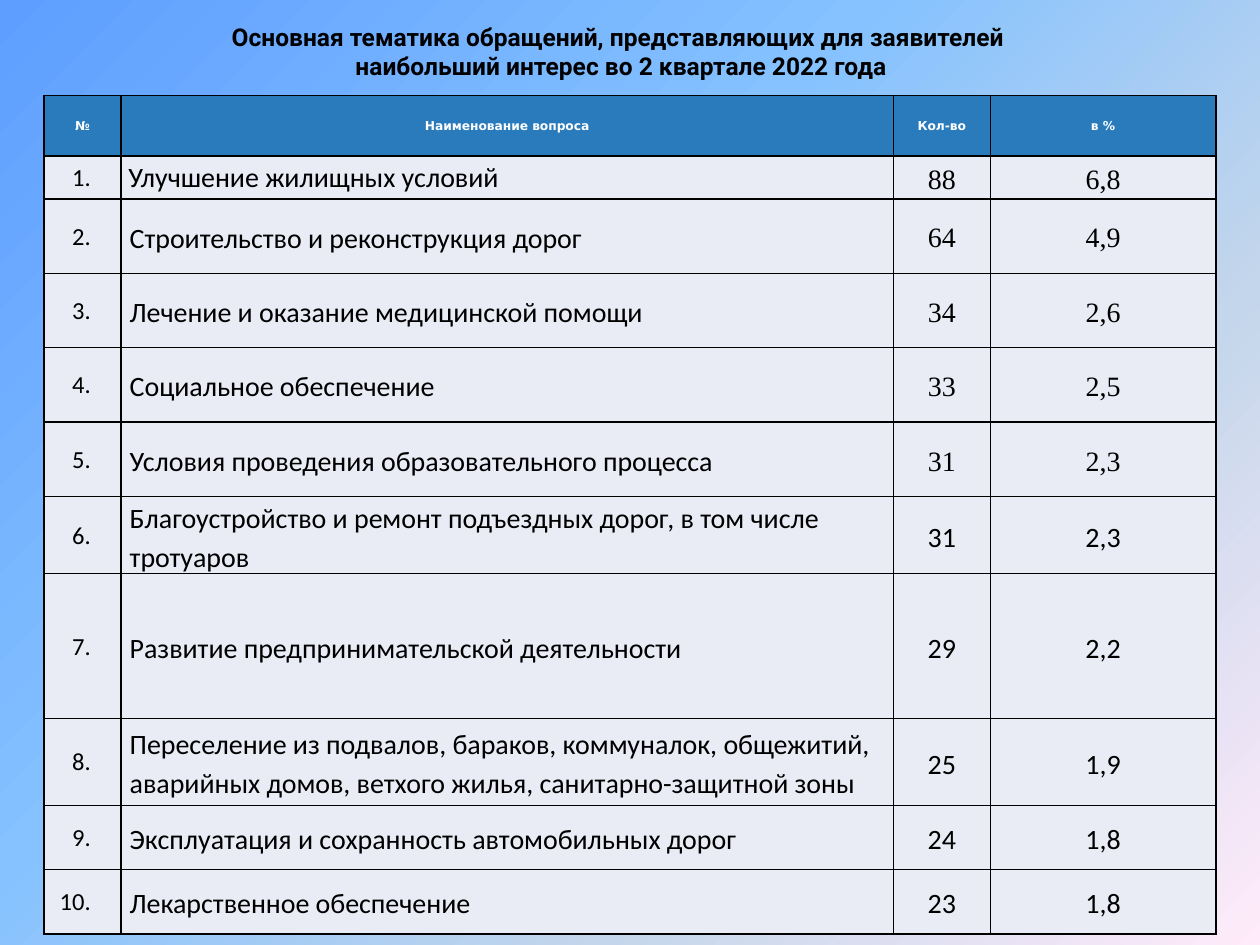
from dataclasses import dataclass

import lxml.etree
import pptx
import pptx.dml.color
import pptx.enum.text
import pptx.oxml
import pptx.oxml.ns
import pptx.util

COLORS = {
    "text": "000000", "header_text": "FFFFFF", "border": "000000",
    "header": "297BBC", "body": "E9EBF5",
}
BACKGROUND = {0: "5E9EFF", 40: "85C2FF", 70: "C4D6EB", 100: "FFEBFA"}
ALIGN = pptx.enum.text.PP_ALIGN
MIDDLE = pptx.enum.text.MSO_ANCHOR.MIDDLE
WIDTH, HEIGHT = pptx.util.Inches(10), pptx.util.Inches(7.5)

# Percent of the slide width and height
TITLE = (3.5, 1.73, 91.6, 7.33)
TABLE_LEFT, TABLE_TOP = 3.5, 10.13
COLUMNS = (6.1, 61.3, 7.7, 17.9)
HEADER_HEIGHT = 6.4
HEADERS = ("№", "Наименование вопроса", "Кол-во", "в %")


@dataclass(frozen=True)
class Topic:
    name: str
    count: str
    percent: str
    height: float = 7.87
    value_font: str = "Calibri"


@dataclass(frozen=True)
class Style:
    size: float
    font: str = "Calibri"
    color: str = "text"
    bold: bool = False
    align: ALIGN = ALIGN.LEFT
    spacing: float = 1.0
    insets: tuple[float, ...] = (0.07, 0, 0.07, 0)  # left, top, right, bottom


SERIF = "Times New Roman"
TOPICS = (
    Topic("Улучшение жилищных условий", "88", "6,8", 4.53, SERIF),
    Topic("Строительство и реконструкция дорог", "64", "4,9", value_font=SERIF),
    Topic("Лечение и оказание медицинской помощи", "34", "2,6", value_font=SERIF),
    Topic("Социальное обеспечение", "33", "2,5", value_font=SERIF),
    Topic("Условия проведения образовательного процесса", "31", "2,3", value_font=SERIF),
    Topic("Благоустройство и ремонт подъездных дорог, в том числе тротуаров", "31", "2,3"),
    Topic("Развитие предпринимательской деятельности", "29", "2,2", 15.33),
    Topic("Переселение из подвалов, бараков, коммуналок, общежитий, "
          "аварийных домов, ветхого жилья, санитарно-защитной зоны", "25", "1,9", 9.2),
    Topic("Эксплуатация и сохранность автомобильных дорог", "24", "1,8", 6.8),
    Topic("Лекарственное обеспечение", "23", "1,8", 6.8),
)

TITLE_STYLE = Style(14, "Roboto", bold=True, align=ALIGN.CENTER)
HEADER_STYLE = Style(7, "DejaVu Sans", "header_text", True, ALIGN.CENTER,
                     insets=(0.01, 0.01, 0.01, 0))
NUMBER_STYLE = Style(14, align=ALIGN.RIGHT, insets=(0.01, 0.01, 0.24, 0))
FIRST_NAME_STYLE = Style(16, insets=(0.06, 0.01, 0.01, 0))
NAME_STYLE = Style(16, spacing=1.15)


def across(percent: float) -> int:
    return round(WIDTH * percent / 100)


def down(percent: float) -> int:
    return round(HEIGHT * percent / 100)


def rgb(name: str) -> pptx.dml.color.RGBColor:
    return pptx.dml.color.RGBColor.from_string(COLORS[name])


def write(tf, text: str, style: Style) -> None:
    """Put formatted text into a text frame."""
    tf.text = text
    for p in tf.paragraphs:
        p.alignment = style.align
        p.line_spacing = style.spacing
        for r in p.runs:
            formats = {"size": pptx.util.Pt(style.size), "name": style.font,
                       "bold": style.bold}
            for key, value in formats.items():
                setattr(r.font, key, value)
            r.font.color.rgb = rgb(style.color)


def set_margins(target, insets: tuple[float, ...]) -> None:
    for side, inset in zip(("left", "top", "right", "bottom"), insets):
        setattr(target, f"margin_{side}", pptx.util.Inches(inset))


def add_borders(cell) -> None:
    tcPr = cell._tc.get_or_add_tcPr()
    for side in "LRTB":
        tcPr.append(pptx.oxml.parse_xml(
            f'<a:ln{side} {pptx.oxml.ns.nsdecls("a")} w="12700"><a:solidFill>'
            f'<a:srgbClr val="{COLORS["border"]}"/></a:solidFill></a:ln{side}>'))


def fill_cell(cell, text: str, style: Style, fill: str) -> None:
    add_borders(cell)
    cell.fill.solid()
    cell.fill.fore_color.rgb = rgb(fill)
    cell.vertical_anchor = MIDDLE
    set_margins(cell, style.insets)
    write(cell.text_frame, text, style)


def paint_background(slide) -> None:
    fill = slide.background.fill
    fill.gradient()
    fill.gradient_angle = 315
    qn = pptx.oxml.ns.qn
    stops = next(slide.element.iter(qn("a:gsLst")))
    for stop in list(stops):
        stops.remove(stop)
    for position, color in BACKGROUND.items():
        stop = lxml.etree.SubElement(stops, qn("a:gs"), pos=str(position * 1000))
        lxml.etree.SubElement(stop, qn("a:srgbClr"), val=color)


def add_title(slide) -> None:
    left, top, width, height = TITLE
    sp = slide.shapes.add_textbox(across(left), down(top), across(width), down(height))
    tf = sp.text_frame
    tf.word_wrap = True
    tf.vertical_anchor = MIDDLE
    set_margins(tf, (0.1, 0.05, 0.1, 0.05))
    write(tf, "Основная тематика обращений, представляющих для заявителей \v"
              "наибольший интерес во 2 квартале 2022 года", TITLE_STYLE)


def add_topics(slide) -> None:
    heights = [HEADER_HEIGHT] + [topic.height for topic in TOPICS]
    frame = slide.shapes.add_table(
        len(heights), len(COLUMNS), across(TABLE_LEFT), down(TABLE_TOP),
        across(sum(COLUMNS)), down(sum(heights)))
    table = frame.table
    table.horz_banding = False
    for column, width in zip(table.columns, COLUMNS):
        column.width = across(width)
    for row, height in zip(table.rows, heights):
        row.height = down(height)

    for col, header in enumerate(HEADERS):
        fill_cell(table.cell(0, col), header, HEADER_STYLE, "header")
    for number, topic in enumerate(TOPICS, 1):
        value_style = Style(16, topic.value_font, align=ALIGN.CENTER, spacing=1.15)
        name_style = FIRST_NAME_STYLE if number == 1 else NAME_STYLE
        entries = ((f"{number}.", NUMBER_STYLE), (topic.name, name_style),
                   (topic.count, value_style), (topic.percent, value_style))
        for col, (text, style) in enumerate(entries):
            fill_cell(table.cell(number, col), text, style, "body")


def main() -> None:
    prs = pptx.Presentation()
    prs.slide_width, prs.slide_height = WIDTH, HEIGHT
    slide = prs.slides.add_slide(prs.slide_layouts[6])
    paint_background(slide)
    add_title(slide)
    add_topics(slide)
    prs.save("out.pptx")


if __name__ == "__main__":
    main()
